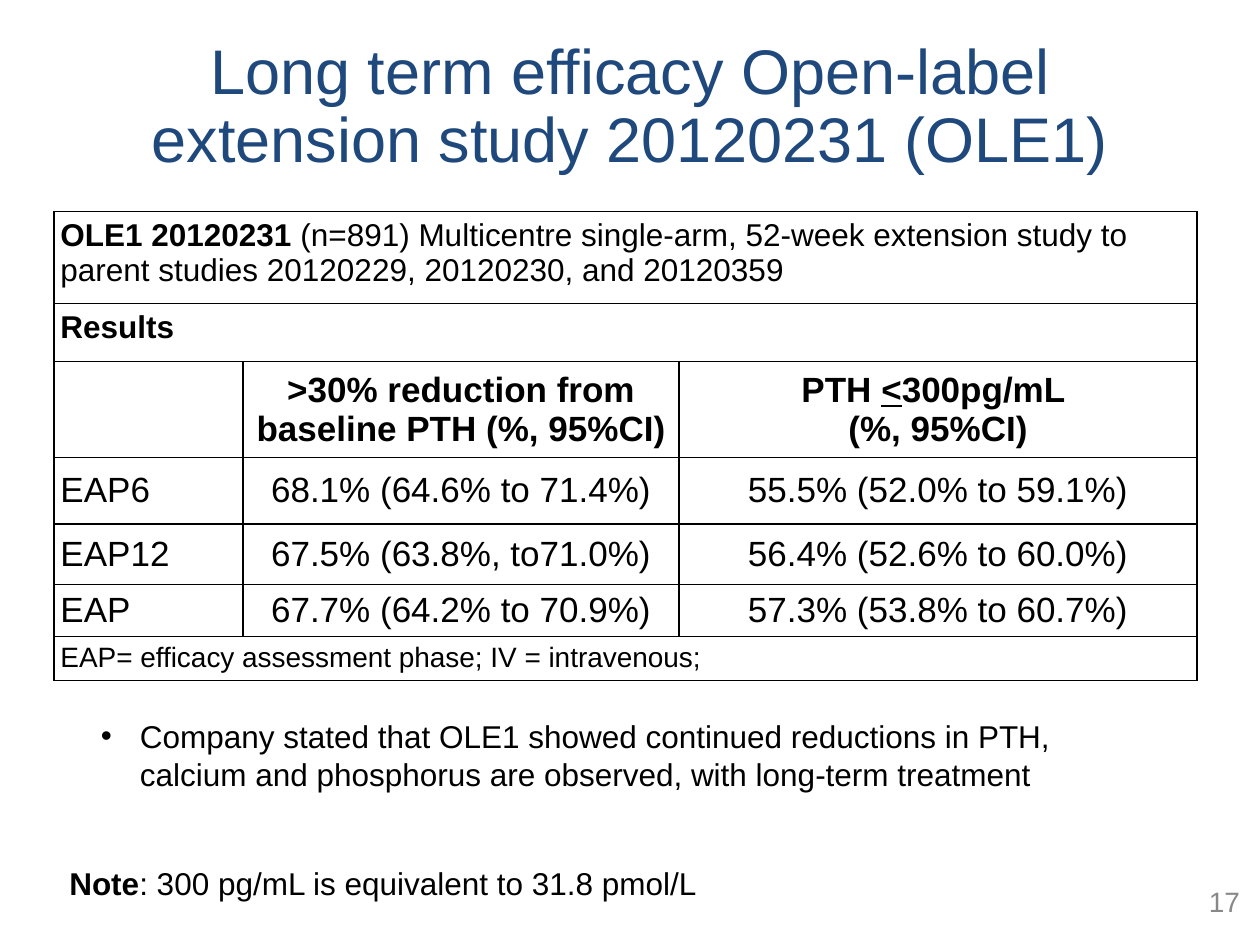
import pptx
import pptx.dml.color
import pptx.enum.text
import pptx.oxml
import pptx.oxml.ns
import pptx.util
from dataclasses import dataclass

Inches, Pt = pptx.util.Inches, pptx.util.Pt
ALIGN, ANCHOR = pptx.enum.text.PP_ALIGN, pptx.enum.text.MSO_ANCHOR
BLACK, NAVY, GREY = "000000", "1F497D", "888888"
PAD = Inches(0.05)


@dataclass
class Run:
    text: str
    bold: bool = False
    underline: bool = False


@dataclass
class Cell:
    paragraphs: list[list[Run]]
    size: int = 20
    align: ALIGN = ALIGN.LEFT
    anchor: ANCHOR = ANCHOR.MIDDLE
    span: int = 1


def rgb(value: str) -> pptx.dml.color.RGBColor:
    return pptx.dml.color.RGBColor.from_string(value)


def apply(obj, values: dict) -> None:
    for name, value in values.items():
        setattr(obj, name, value)


def write(tf, paragraphs: list[list[Run]], size: int, color: str = BLACK,
          align: ALIGN = ALIGN.LEFT, spacing: float = 1.0) -> None:
    for i, runs in enumerate(paragraphs):
        p = tf.paragraphs[0] if i == 0 else tf.add_paragraph()
        apply(p, {"alignment": align, "line_spacing": spacing, "space_before": Pt(0)})
        for run in runs:
            r = p.add_run()
            r.text = run.text
            apply(r.font, {"name": "Arial", "size": Pt(size), "bold": run.bold,
                           "underline": run.underline})
            r.font.color.rgb = rgb(color)


def place(sp, left: float, top: float, width: float, height: float,
          anchor: ANCHOR = ANCHOR.TOP):
    apply(sp, {"left": Inches(left), "top": Inches(top),
               "width": Inches(width), "height": Inches(height)})
    tf = sp.text_frame
    apply(tf, {"word_wrap": True, "vertical_anchor": anchor,
               "auto_size": pptx.enum.text.MSO_AUTO_SIZE.NONE,
               "margin_left": PAD, "margin_right": PAD,
               "margin_top": PAD, "margin_bottom": PAD})
    return tf


def add_borders(cell) -> None:
    tc_pr = cell._tc.get_or_add_tcPr()
    for side in ("lnL", "lnR", "lnT", "lnB"):
        tc_pr.append(pptx.oxml.parse_xml(
            f'<a:{side} {pptx.oxml.ns.nsdecls("a")} w="12700"><a:solidFill>'
            f'<a:srgbClr val="{BLACK}"/></a:solidFill></a:{side}>'))


def fill_cell(cell, data: Cell) -> None:
    apply(cell, {"margin_left": PAD, "margin_right": PAD, "margin_top": PAD,
                 "margin_bottom": PAD, "vertical_anchor": data.anchor})
    write(cell.text_frame, data.paragraphs, data.size, align=data.align)


def wide(size: int, *runs: Run) -> list[Cell]:
    return [Cell([list(runs)], size, anchor=ANCHOR.TOP, span=3)]


def centred(*paragraphs: list[Run]) -> Cell:
    return Cell(list(paragraphs), align=ALIGN.CENTER)


def result(phase: str, reduction: str, target: str) -> list[Cell]:
    return [Cell([[Run(phase)]]), centred([Run(reduction)]), centred([Run(target)])]


COLUMNS = [1.5, 3.46, 4.11]
HEIGHTS = [0.73, 0.46, 0.76, 0.53, 0.48, 0.41, 0.35]
ROWS = [
    wide(18, Run("OLE1 20120231 ", True),
         Run("(n=891) Multicentre single-arm, 52-week extension study to "
             "parent studies 20120229, 20120230, and 20120359")),
    wide(18, Run("Results", True)),
    [Cell([[]]),
     centred([Run(">30% reduction from baseline PTH (%, 95%CI)", True)]),
     centred([Run("PTH ", True), Run("<", True, True), Run("300pg/mL ", True)],
             [Run("(%, 95%CI)", True)])],
    result("EAP6", "68.1% (64.6% to 71.4%)", "55.5% (52.0% to 59.1%)"),
    result("EAP12", "67.5% (63.8%, to71.0%)", "56.4% (52.6% to 60.0%)"),
    result("EAP", "67.7% (64.2% to 70.9%)", "57.3% (53.8% to 60.7%)"),
    wide(16, Run("EAP= efficacy assessment phase; IV = intravenous;")),
]


def add_results_table(s) -> None:
    table = s.shapes.add_table(len(ROWS), len(COLUMNS), Inches(0.43), Inches(1.68),
                               Inches(sum(COLUMNS)), Inches(sum(HEIGHTS))).table
    apply(table, {"first_row": False, "horz_banding": False})
    for column, width in zip(table.columns, COLUMNS):
        column.width = Inches(width)
    for row, height in zip(table.rows, HEIGHTS):
        row.height = Inches(height)
    for cell in table.iter_cells():
        add_borders(cell)
        cell.fill.background()
    for i, row in enumerate(ROWS):
        for j, data in enumerate(row):
            cell = table.cell(i, j)
            if data.span > 1:
                cell.merge(table.cell(i, j + data.span - 1))
            fill_cell(cell, data)


def main() -> None:
    prs = pptx.Presentation()
    apply(prs, {"slide_width": Inches(10), "slide_height": Inches(7.5)})
    s = prs.slides.add_slide(prs.slide_layouts[1])

    # Title
    tf = place(s.shapes.title, 0.48, 0.22, 9.04, 1.28, ANCHOR.MIDDLE)
    write(tf, [[Run("Long term efficacy Open-label extension study 20120231 (OLE1)")]],
          36, NAVY, ALIGN.CENTER, 0.9)

    # Results table
    add_results_table(s)

    # Company statement
    tf = place(s.placeholders[1], 0.75, 5.64, 8.19, 0.68)
    write(tf, [[Run("Company stated that OLE1 showed continued reductions in PTH, "
                    "calcium and phosphorus are observed, with long-term treatment")]], 18)
    p_pr = tf.paragraphs[0]._p.get_or_add_pPr()
    p_pr.set("marL", str(Inches(0.31)))
    p_pr.set("indent", str(-Inches(0.31)))

    # Note and slide number
    tf = place(s.shapes.add_textbox(0, 0, 0, 0), 0.5, 6.81, 8.68, 0.38)
    write(tf, [[Run("Note", True), Run(": 300 pg/mL is equivalent to 31.8 pmol/L")]], 18)
    tf = place(s.shapes.add_textbox(0, 0, 0, 0), 9.31, 6.97, 0.58, 0.37, ANCHOR.MIDDLE)
    write(tf, [[Run("17")]], 16, GREY, ALIGN.RIGHT)

    prs.save("out.pptx")


if __name__ == "__main__":
    main()
